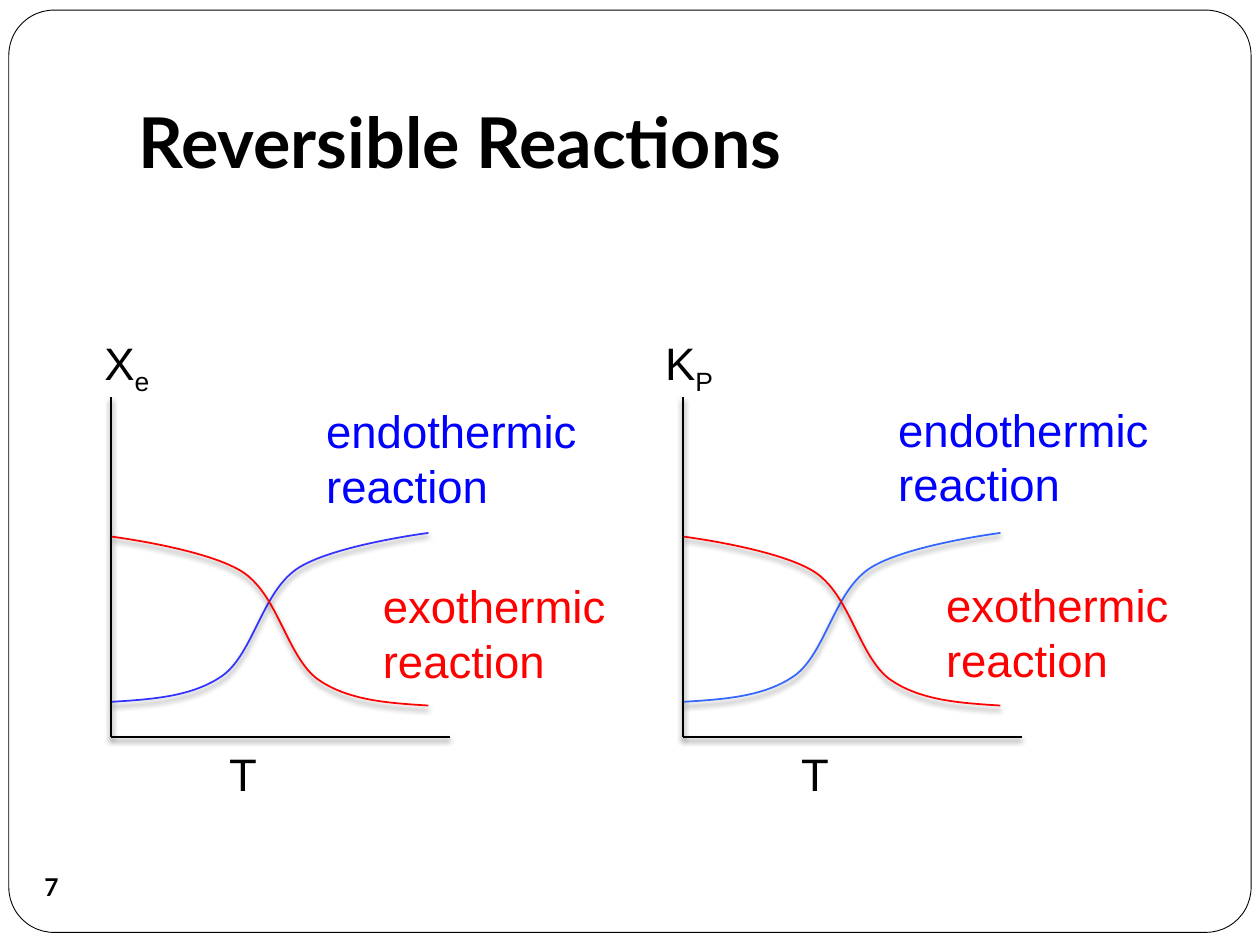
from dataclasses import dataclass

from lxml import etree
from pptx import Presentation
from pptx.dml.color import RGBColor
from pptx.enum import shapes, text
from pptx.oxml import ns
from pptx.util import Inches, Pt

BLACK, WHITE, RED, BLUE = "000000", "FFFFFF", "FF0000", "0000FF"
AXIS_TOP, AXIS_BOTTOM, AXIS_LENGTH = 3.15, 5.85, 2.69

Point = tuple[float, float]

# Bezier points: x from the vertical axis, y on the slide
ENDOTHERMIC: list[Point] = [
    (0.01, 5.57), (0.33, 5.55), (0.65, 5.53), (0.89, 5.36), (1.13, 5.18),
    (1.2, 4.71), (1.47, 4.52), (1.74, 4.33), (2.52, 4.23), (2.52, 4.23)]
EXOTHERMIC: list[Point] = [
    (2.52, 5.6), (2.2, 5.58), (1.88, 5.56), (1.64, 5.39), (1.4, 5.21),
    (1.33, 4.74), (1.06, 4.55), (0.79, 4.36), (0.01, 4.26), (0.01, 4.26)]


@dataclass
class Label:
    wording: str
    left: float
    top: float
    width: float
    height: float
    color: str = BLACK
    subscript: str = ""


@dataclass
class Graph:
    axis_left: float
    endothermic_color: str
    labels: list[Label]


GRAPHS = [
    Graph(5.42, "3366FF", [
        Label("endothermic reaction", 7.03, 3.14, 2.92, 0.98, BLUE),
        Label("exothermic reaction", 7.41, 4.53, 2.31, 0.98, RED),
        Label("K", 5.18, 2.61, 0.77, 0.54, subscript="P"),
        Label("T", 6.26, 5.87, 0.77, 0.54)]),
    Graph(0.88, "3333FF", [
        Label("endothermic reaction", 2.49, 3.15, 2.92, 0.98, BLUE),
        Label("exothermic reaction", 2.94, 4.54, 2.47, 0.98, RED),
        Label("X", 0.73, 2.61, 0.77, 0.54, subscript="e"),
        Label("T", 1.72, 5.87, 0.77, 0.54)]),
]


def rgb(color: str) -> RGBColor:
    return RGBColor.from_string(color)


def style_font(font, name: str, size: float, color: str, bold: bool = False) -> None:
    font.name, font.size, font.bold = name, Pt(size), bold
    font.color.rgb = rgb(color)


def style_line(line, color: str, width: float = 1) -> None:
    line.color.rgb = rgb(color)
    line.width = Pt(width)


def add_soft_shadow(shape) -> None:
    properties = shape._element.spPr
    for old in properties.findall(ns.qn("a:effectLst")):
        properties.remove(old)
    effects = etree.SubElement(properties, ns.qn("a:effectLst"))
    shadow = etree.SubElement(effects, ns.qn("a:outerShdw"), blurRad=str(Pt(3)),
                              dist=str(Pt(2)), dir="5400000", rotWithShape="0")
    color = etree.SubElement(shadow, ns.qn("a:srgbClr"), val=BLACK)
    etree.SubElement(color, ns.qn("a:alpha"), val="50000")


def add_axis(group, start: Point, end: Point) -> None:
    axis = group.shapes.add_connector(shapes.MSO_CONNECTOR.STRAIGHT,
                                      *map(Inches, start + end))
    style_line(axis.line, BLACK)
    add_soft_shadow(axis)


def bend_segments(freeform) -> None:
    """Turn every three straight segments into one cubic Bezier segment."""
    segments = list(freeform._element.iter(ns.qn("a:lnTo")))
    for first in range(0, len(segments), 3):
        bezier = etree.Element(ns.qn("a:cubicBezTo"))
        segments[first].addprevious(bezier)
        for segment in segments[first:first + 3]:
            bezier.append(segment[0])
            segment.getparent().remove(segment)


def add_curve(group, axis_left: float, controls: list[Point], color: str) -> None:
    points = [(Inches(axis_left + x), Inches(y)) for x, y in controls]
    builder = group.shapes.build_freeform(*points[0])
    builder.add_line_segments(points[1:], close=False)
    curve = builder.convert_to_shape()
    bend_segments(curve)
    curve.fill.background()
    style_line(curve.line, color)
    add_soft_shadow(curve)


def add_label(group, label: Label) -> None:
    box = group.shapes.add_textbox(Inches(label.left), Inches(label.top),
                                   Inches(label.width), Inches(label.height))
    box.text_frame.word_wrap = True
    box.text_frame.auto_size = text.MSO_AUTO_SIZE.SHAPE_TO_FIT_TEXT
    paragraph = box.text_frame.paragraphs[0]
    paragraph.text = label.wording
    if label.subscript:
        run = paragraph.add_run()
        run.text = label.subscript
        run.font._element.set("baseline", "-25000")
    for run in paragraph.runs:
        style_font(run.font, "Arial", 26, label.color)


def add_graph(slide, graph: Graph) -> None:
    group = slide.shapes.add_group_shape()
    left = graph.axis_left
    origin = (left, AXIS_BOTTOM)
    add_axis(group, (left, AXIS_TOP), origin)
    add_axis(group, origin, (left + AXIS_LENGTH, AXIS_BOTTOM))
    add_curve(group, left, ENDOTHERMIC, graph.endothermic_color)
    add_curve(group, left, EXOTHERMIC, RED)
    for label in graph.labels:
        add_label(group, label)


def add_frame(slide) -> None:
    frame = slide.shapes.add_shape(shapes.MSO_SHAPE.ROUNDED_RECTANGLE, Inches(0.07),
                                   Inches(0.08), Inches(9.86), Inches(7.32))
    frame.adjustments[0] = 0.049
    frame.shadow.inherit = False
    frame.fill.solid()
    frame.fill.fore_color.rgb = rgb(WHITE)
    style_line(frame.line, BLACK, 0.5)
    # The frame lies behind the title
    tree = slide.shapes._spTree
    tree.remove(frame._element)
    tree.insert(2, frame._element)


def add_page_number(slide, number: str) -> None:
    badge = slide.shapes.add_shape(shapes.MSO_SHAPE.OVAL, Inches(0.16), Inches(6.79),
                                   Inches(0.5), Inches(0.5))
    badge.shadow.inherit = False
    badge.fill.solid()
    badge.fill.fore_color.rgb = rgb(WHITE)
    badge.line.fill.background()
    frame = badge.text_frame
    frame.margin_left = frame.margin_right = frame.margin_top = frame.margin_bottom = 0
    frame.word_wrap = False
    frame.vertical_anchor = text.MSO_ANCHOR.MIDDLE
    frame.text = number
    frame.paragraphs[0].alignment = text.PP_ALIGN.CENTER
    style_font(frame.paragraphs[0].runs[0].font, "Lato", 14, BLACK, bold=True)


def set_title(slide, wording: str) -> None:
    title = slide.shapes.title
    title.left, title.top = Inches(1), Inches(0.3)
    title.width, title.height = Inches(8.5), Inches(1.25)
    frame = title.text_frame
    frame.auto_size = text.MSO_AUTO_SIZE.NONE
    frame.vertical_anchor = text.MSO_ANCHOR.BOTTOM
    frame.margin_bottom = Inches(0.1)
    frame.text = wording
    frame.paragraphs[0].alignment = text.PP_ALIGN.LEFT
    style_font(frame.paragraphs[0].runs[0].font, "Lato", 40, BLACK, bold=True)


def main() -> None:
    presentation = Presentation()
    presentation.slide_width, presentation.slide_height = Inches(10), Inches(7.5)
    slide = presentation.slides.add_slide(presentation.slide_layouts[5])
    add_frame(slide)
    add_page_number(slide, "7")
    set_title(slide, "Reversible Reactions")
    for graph in GRAPHS:
        add_graph(slide, graph)
    presentation.save("out.pptx")


if __name__ == "__main__":
    main()
